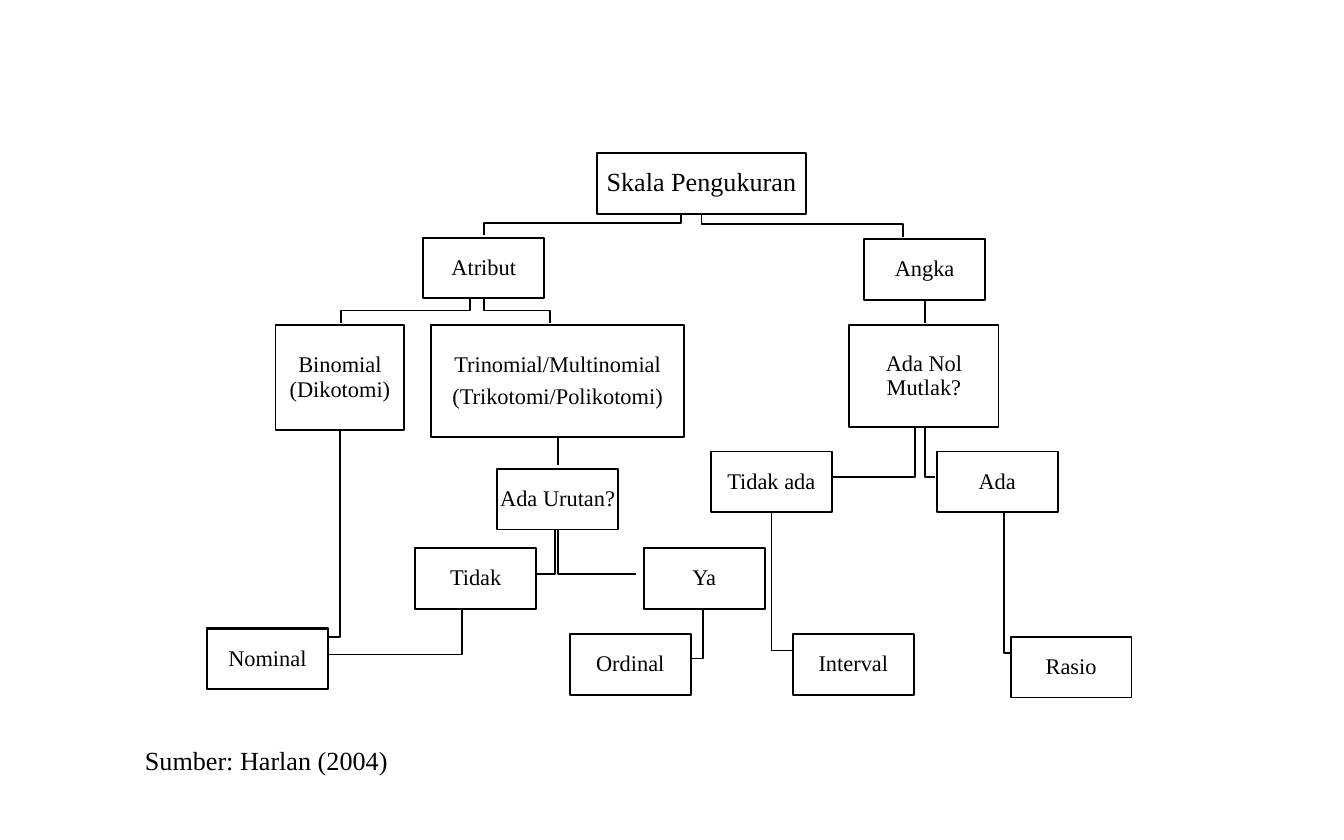
from lxml.etree import SubElement
from pptx import Presentation
from pptx.dml.color import RGBColor
from pptx.enum.shapes import MSO_CONNECTOR, MSO_SHAPE
from pptx.enum.text import MSO_ANCHOR, PP_ALIGN
from pptx.oxml.ns import qn
from pptx.util import Pt

PX = 9144  # EMU per px, 100 px to the inch
COLORS = {"ink": "000000", "paper": "FFFFFF"}
INK = RGBColor.from_string(COLORS["ink"])
PAPER = RGBColor.from_string(COLORS["paper"])
BOX_WIDTH, BOX_HEIGHT = 90, 45
BOX_FRAME = {
    "word_wrap": True, "vertical_anchor": MSO_ANCHOR.MIDDLE,
    "margin_left": PX, "margin_right": PX, "margin_top": PX, "margin_bottom": PX,
}
BOX_PARAGRAPH = {"alignment": PP_ALIGN.CENTER, "line_spacing": 0.9}


def set_font(paragraph, size):
    for name, value in {"name": "Times New Roman", "size": Pt(size)}.items():
        setattr(paragraph.font, name, value)
    paragraph.font.color.rgb = INK


def outline(shape):
    shape.line.color.rgb = INK
    shape.line.width = Pt(1)


presentation = Presentation()
presentation.slide_width = 1000 * PX
presentation.slide_height = 625 * PX
slide = presentation.slides.add_slide(presentation.slide_layouts[6])
shapes = slide.shapes

# Bent branches between the boxes
branches = [
    [(747, 382), (747, 486), (757, 486)],              # Ada - Rasio
    [(688, 317), (688, 355), (696, 355)],              # Ada Nol Mutlak? - Ada
    [(574, 382), (574, 484), (589, 484)],              # Tidak ada - Interval
    [(681, 317), (681, 355), (620, 355)],              # Ada Nol Mutlak? - Tidak ada
    [(522, 159), (522, 167), (672, 167), (672, 176)],  # Skala - Angka
    [(523, 453), (523, 490), (514, 490)],              # Ya - Ordinal
    [(415, 394), (415, 427), (473, 427)],              # Ada Urutan? - Ya
    [(344, 453), (344, 487), (244, 487)],              # Tidak - Nominal
    [(413, 394), (413, 427), (399, 427)],              # Ada Urutan? - Tidak
    [(360, 222), (360, 231), (409, 231), (409, 240)],  # Atribut - Trinomial
    [(253, 320), (253, 474), (244, 474)],              # Binomial - Nominal
    [(350, 222), (350, 231), (254, 231), (254, 240)],  # Atribut - Binomial
    [(507, 159), (507, 166), (360, 166), (360, 175)],  # Skala - Atribut
]
for start, *corners in branches:
    builder = shapes.build_freeform(*start, scale=PX)
    builder.add_line_segments(corners, close=False)
    branch = builder.convert_to_shape()
    branch.shadow.inherit = False
    branch.fill.background()
    outline(branch)

# Straight branches: Angka - Ada Nol Mutlak?, Trinomial - Ada Urutan?
for x, top, bottom in [(688, 223, 240), (415, 325, 346)]:
    connector = shapes.add_connector(
        MSO_CONNECTOR.STRAIGHT, x * PX, top * PX, x * PX, bottom * PX)
    outline(connector)
    SubElement(connector._element.spPr, qn("a:effectLst"))

# Boxes: text, left, top, width, height, font size
boxes = [
    ("Skala Pengukuran", 444, 114, 156, BOX_HEIGHT, 14),
    ("Binomial (Dikotomi)", 205, 242, 96, 78, 12),
    ("Trinomial/Multinomial\n(Trikotomi/Polikotomi)", 321, 242, 188, 83, 12),
    ("Ada Nol Mutlak?", 632, 242, 111, 76, 12),
]
standard_boxes = [
    ("Atribut", 315, 177), ("Angka", 643, 178),
    ("Ada Urutan?", 370, 349), ("Tidak", 309, 408), ("Ya", 479, 408),
    ("Tidak ada", 529, 336), ("Ada", 697, 336),
    ("", 154, 467), ("Nominal", 154, 468),
    ("Ordinal", 424, 472), ("Interval", 590, 472), ("Rasio", 752, 474),
]
boxes += [(*box, BOX_WIDTH, BOX_HEIGHT, 12) for box in standard_boxes]

for text, left, top, width, height, size in boxes:
    box = shapes.add_shape(
        MSO_SHAPE.RECTANGLE, left * PX, top * PX, width * PX, height * PX)
    box.shadow.inherit = False
    box.fill.solid()
    box.fill.fore_color.rgb = PAPER
    outline(box)
    frame = box.text_frame
    for name, value in BOX_FRAME.items():
        setattr(frame, name, value)
    frame.text = text
    for paragraph in frame.paragraphs:
        for name, value in BOX_PARAGRAPH.items():
            setattr(paragraph, name, value)
        set_font(paragraph, size)
    for paragraph in frame.paragraphs[:-1]:
        paragraph.space_after = Pt(4.2)

source_note = shapes.add_textbox(98 * PX, 549 * PX, 500 * PX, 34 * PX)
source_note.text_frame.word_wrap = True
source_note.text_frame.text = "Sumber: Harlan (2004)"
set_font(source_note.text_frame.paragraphs[0], 14)

presentation.save("out.pptx")
